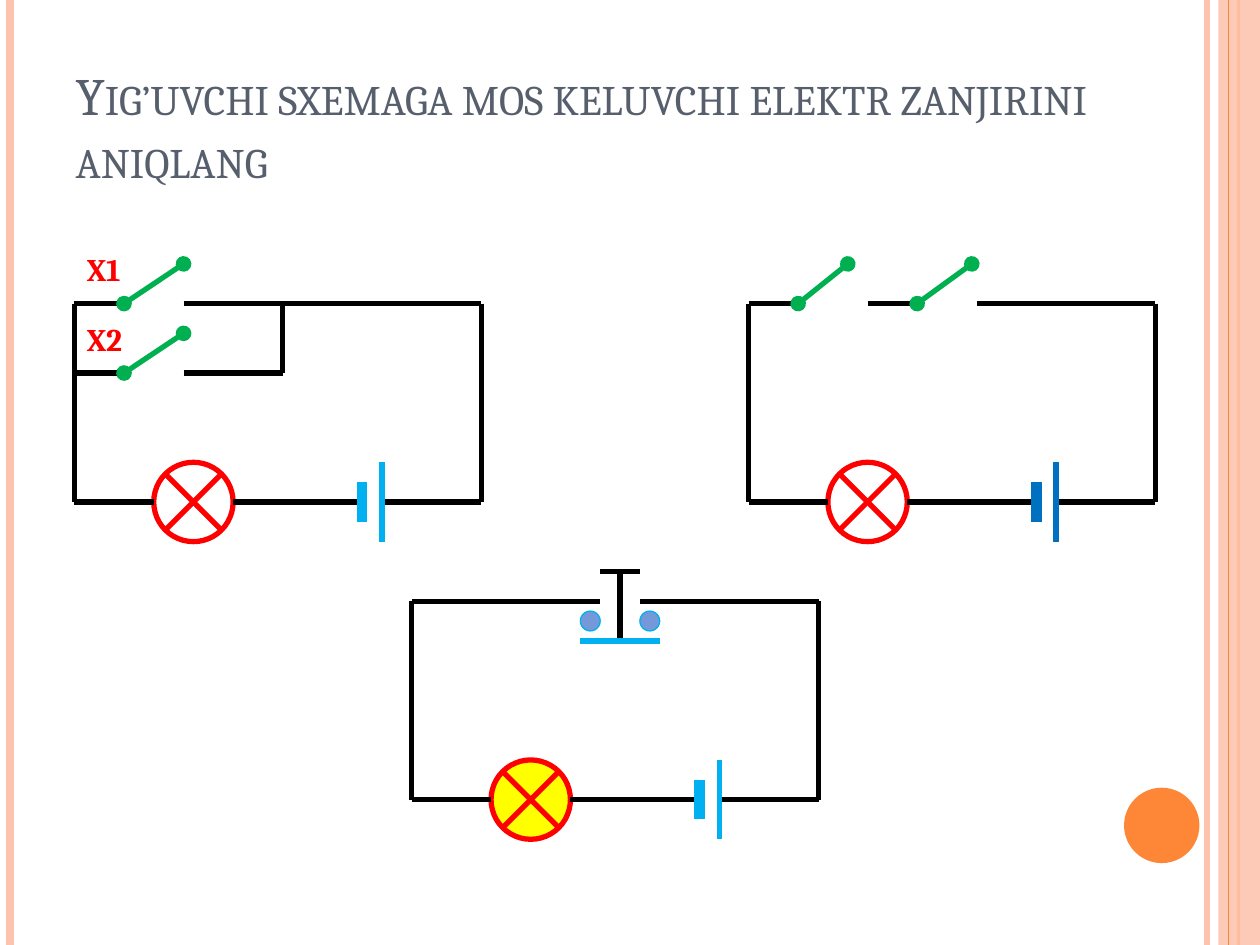
from pptx import Presentation
from pptx.dml.color import RGBColor
from pptx.enum.shapes import MSO_CONNECTOR as Connector, MSO_SHAPE as Shape
from pptx.enum.text import MSO_ANCHOR as Anchor, MSO_AUTO_SIZE as AutoSize, PP_ALIGN as Align
from pptx.oxml.ns import qn
from pptx.util import Cm, Pt
from lxml.etree import SubElement

BLACK, RED, GREEN, CYAN, PEACH, ORANGE = "000000", "FF0000", "00B050", "00B0F0", "FEC3AE", "FE8637"
color = RGBColor.from_string

deck = Presentation()
deck.slide_width, deck.slide_height = Cm(25.4), Cm(19.05)
page = deck.slides.add_slide(deck.slide_layouts[5])


def add_line(x1, y1, x2, y2, hue=BLACK, width=3, dots=False):
    line = page.shapes.add_connector(Connector.STRAIGHT, Cm(x1), Cm(y1), Cm(x2), Cm(y2))
    line.line.color.rgb = color(hue)
    line.line.width = Pt(width)
    if dots:
        for end in ("a:headEnd", "a:tailEnd"):
            SubElement(line.line._get_or_add_ln(), qn(end), type="oval")
    SubElement(line._element.spPr, qn("a:effectLst"))


def add_figure(kind, x, y, width, height, fill=None, outline=None, weight=3):
    figure = page.shapes.add_shape(kind, Cm(x), Cm(y), Cm(width), Cm(height))
    figure.shadow.inherit = False
    if fill:
        figure.fill.solid()
        figure.fill.fore_color.rgb = color(fill)
    else:
        figure.fill.background()
    if outline:
        figure.line.color.rgb = color(outline)
        figure.line.width = Pt(weight)
    else:
        figure.line.fill.background()
    return figure


for x, hue, width in [(24.33, PEACH, 3), (0.2, PEACH, 4.5), (24.97, ORANGE, 1.5)]:
    add_line(x, 0, x, 19.05, hue, width)
band = add_figure(Shape.RECTANGLE, 24.56, 0, 0.84, 19.05, PEACH)
SubElement(band._element.spPr.find(qn("a:solidFill"))[0], qn("a:alpha"), val="87000")
add_line(24.77, 0, 24.77, 19.05, ORANGE, 0.75)
add_figure(Shape.OVAL, 22.66, 15.88, 1.52, 1.52, ORANGE)

title = page.shapes.title
title.left, title.top, title.width, title.height = Cm(1.27), Cm(0.76), Cm(22.43), Cm(3.18)
frame = title.text_frame
frame.text = "Yig’uvchi sxemaga mos keluvchi elektr zanjirini aniqlang"
frame.vertical_anchor = Anchor.BOTTOM
frame.auto_size = AutoSize.NONE
para = frame.paragraphs[0]
para.alignment = Align.LEFT
para.font.size = Pt(30)
para.font.name = "Cambria"
para.font.color.rgb = color("575F6D")
para.runs[0].font._element.set("cap", "small")

parallel, series, button = (1.5, 6.12), (15.09, 6.12), (8.3, 12.12)
circuits = [
    (parallel, None, CYAN, [(0, 1), (2.2, 8.2)]),
    (series, "FFFFFF", "0070C0", [(0, 1), (2.4, 3.4), (4.6, 8.2)]),
    (button, "FFFF00", CYAN, [(0, 3.8), (4.6, 8.2)]),
]
for (left, top), lamp_fill, battery_hue, top_wires in circuits:
    bottom = top + 4
    add_figure(Shape.FLOWCHART_SUMMING_JUNCTION, left + 1.6, bottom - 0.8, 1.6, 1.6, lamp_fill, RED)
    for start, end in top_wires:
        add_line(left + start, top, left + end, top)
    for start, end in [(0, 1.6), (3.2, 5.8), (6.2, 8.2)]:
        add_line(left + start, bottom, left + end, bottom)
    for side in (left, left + 8.2):
        add_line(side, top, side, bottom)
    for offset, half, width in [(5.8, 0.4, 6), (6.2, 0.8, 3)]:
        add_line(left + offset, bottom - half, left + offset, bottom + half, battery_hue, width)

left, top = parallel
branch = top + 1.4
add_line(left, branch, left + 1, branch)
add_line(left + 2.2, branch, left + 4.2, branch)
add_line(left + 4.2, branch, left + 4.2, top)
for name, y in [("X1", top), ("X2", branch)]:
    add_line(left + 1, y, left + 2.2, y - 0.8, GREEN, dots=True)
    label = page.shapes.add_textbox(Cm(left), Cm(y - 1.2), Cm(1.6), Cm(1.02))
    label.text_frame.word_wrap = True
    label.text_frame.text = name
    para = label.text_frame.paragraphs[0]
    para.font.size = Pt(18)
    para.font.name = "Cambria"
    para.font.bold = True
    para.font.color.rgb = color(RED)

left, top = series
for start, end in [(1, 2), (3.4, 4.5)]:
    add_line(left + start, top, left + end, top - 0.8, GREEN, dots=True)

left, top = button
for offset in (3.4, 4.6):
    add_figure(Shape.FLOWCHART_CONNECTOR, left + offset, top + 0.2, 0.4, 0.4, "7598D9", CYAN, 0.75)
add_line(left + 4.2, top - 0.6, left + 4.2, top + 0.8)
add_line(left + 3.4, top + 0.8, left + 5, top + 0.8, CYAN)
add_line(left + 3.8, top - 0.6, left + 4.6, top - 0.6)

deck.save("out.pptx")
